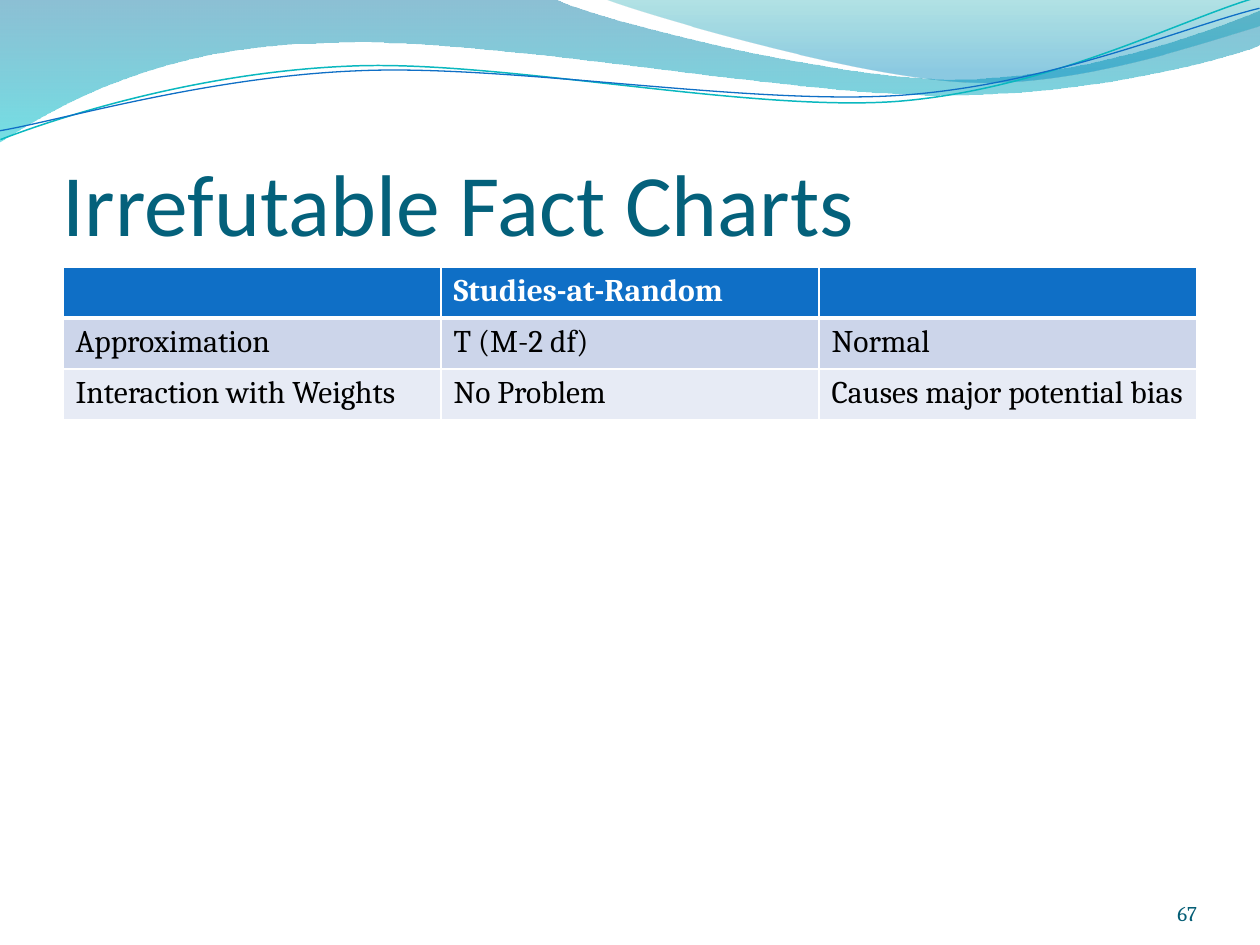
from dataclasses import dataclass

from lxml import etree
from pptx import Presentation
from pptx.dml.color import RGBColor
from pptx.enum.text import MSO_ANCHOR, PP_ALIGN
from pptx.oxml import parse_xml
from pptx.oxml.ns import nsdecls, qn
from pptx.util import Pt

BOTTOM, LEFT, RIGHT = MSO_ANCHOR.BOTTOM, PP_ALIGN.LEFT, PP_ALIGN.RIGHT
PX = 914400 / 126  # EMU in one px


@dataclass
class Theme:
    title: str = "04617B"
    number: str = "045D75"
    head: str = "0F6FC6"
    bands: tuple = ("CCD5EA", "E7EBF5")
    white: str = "FFFFFF"
    black: str = "000000"
    teal: str = "0AB8BF"
    sans: str = "Calibri"
    serif: str = "Cambria"
    title_size: int = 50
    body_size: int = 18
    number_size: int = 12


theme = Theme()


def draw(start, parts, closed):
    """Outline from (x, y) line parts and six-number Bezier parts."""
    points = [p for part in parts for p in zip(part[::2], part[1::2])]
    pen = slide.shapes.build_freeform(*start, scale=PX)
    pen.add_line_segments(points, close=closed)
    shape = pen.convert_to_shape()
    shape.shadow.inherit = False
    # Join each run of three points into one curve
    steps = iter(list(shape._element.iter(qn("a:lnTo"))))
    for part in parts:
        first = next(steps)
        if len(part) == 6:
            curve = etree.Element(qn("a:cubicBezTo"))
            first.addprevious(curve)
            for step in (first, next(steps), next(steps)):
                curve.append(step[0])
                step.getparent().remove(step)
    return shape


def write(frame, text, face, size, color, bold=False, align=LEFT):
    para = frame.paragraphs[0]
    para.text = text
    para.alignment = align
    font = para.font
    font.name, font.size, font.bold = face, Pt(size), bold
    font.color.rgb = RGBColor.from_string(color)


deck = Presentation()
deck.slide_width, deck.slide_height = round(1260 * PX), round(945 * PX)
slide = deck.slides.add_slide(deck.slide_layouts[6])

# Waves: start, parts, gradient stops (percent, colour, opacity)
waves = [
    ((0, 0),
     [(554, -1), (600, 21, 837, 79, 955, 79), (1074, 79, 1207, 33, 1260, 11),
      (1261, 45), (1239, 55, 1096, 96, 940, 95), (784, 95, 481, 35, 324, 43),
      (163, 45, 58, 105, -1, 142), (0, 0)],
     [(0, "0074A1", 45), (100, "00C6CF", 55)]),
    ((604, -1),
     [(641, 14, 859, 78, 969, 82), (1079, 87, 1211, 40, 1260, 26), (1260, 0),
      (604, -1)],
     [(0, "00A1A9", 30), (80, "008BBF", 45)]),
]
for start, parts, stops in waves:
    wave = draw(start, parts, True)
    wave.line.fill.background()
    grad = parse_xml(f'<a:gradFill {nsdecls("a")}><a:gsLst/>'
                     '<a:lin ang="5400000" scaled="0"/></a:gradFill>')
    for pos, color, alpha in stops:
        stop = etree.SubElement(grad[0], qn("a:gs"), pos=str(pos * 1000))
        tint = etree.SubElement(stop, qn("a:srgbClr"), val=color)
        etree.SubElement(tint, qn("a:alpha"), val=str(alpha * 1000))
    wave._element.spPr.find(qn("a:custGeom")).addnext(grad)

# Thin lines over the waves, tilted together
lines = [
    ((-2, 110), [(58, 90, 199, 52, 350, 53), (499, 53, 745, 118, 896, 114),
                 (1048, 109, 1184, 45, 1260, 27)], theme.teal, 0.85),
    ((-2, 101), [(57, 94, 207, 57, 357, 58), (509, 58, 750, 112, 902, 108),
                 (1052, 104, 1189, 52, 1262, 38)], theme.head, 0.75),
]
for start, parts, color, width in lines:
    curve = draw(start, parts, False)
    curve.rotation = -2.7
    curve.fill.background()
    curve.line.color.rgb = RGBColor.from_string(color)
    curve.line.width = Pt(width)

# Title
box = (63, 97, 1134, 157)
frame = slide.shapes.add_textbox(*[round(n * PX) for n in box]).text_frame
frame.margin_top = round(6 * PX)
write(frame, "Irrefutable Fact Charts", theme.sans, theme.title_size,
      theme.title)
frames = [frame]

# Table: the default style gives the thin white borders
rows = [
    ("", "Studies-at-Random", ""),
    ("Approximation", "T (M-2 df)", "Normal"),
    ("Interaction with Weights", "No Problem", "Causes major potential bias"),
]
box = (63, 267, 1134, 51 * len(rows))
table = slide.shapes.add_table(
    len(rows), 3, *[round(n * PX) for n in box]).table
for r, row in enumerate(rows):
    head = r == 0
    fill = theme.head if head else theme.bands[(r - 1) % 2]
    ink = theme.white if head else theme.black
    for c, text in enumerate(row):
        cell = table.cell(r, c)
        cell.fill.solid()
        cell.fill.fore_color.rgb = RGBColor.from_string(fill)
        write(cell.text_frame, text, theme.serif, theme.body_size, ink, head)
        if head:  # thick rule under the header
            cell._tc.tcPr.insert(0, parse_xml(
                f'<a:lnB {nsdecls("a")} w="{Pt(3)}"><a:solidFill>'
                f'<a:srgbClr val="{theme.white}"/></a:solidFill></a:lnB>'))

# Slide number
box = (1092, 876, 105, 50)
frame = slide.shapes.add_textbox(*[round(n * PX) for n in box]).text_frame
frame.margin_top = 0
write(frame, "67", theme.serif, theme.number_size, theme.number, align=RIGHT)
frames.append(frame)

for frame in frames:
    frame.word_wrap = True
    frame.vertical_anchor = BOTTOM
    frame.margin_left = frame.margin_right = frame.margin_bottom = 0

deck.save("out.pptx")
